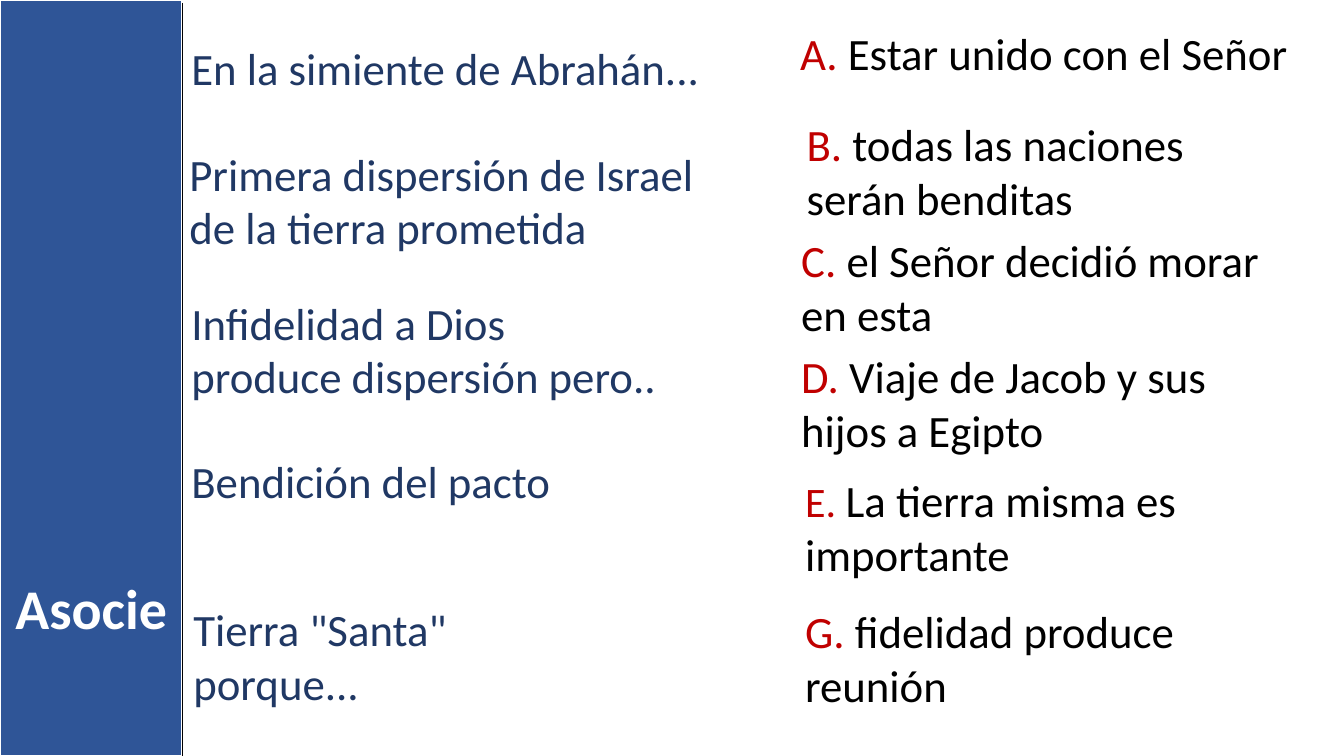
"""Build a Spanish matching exercise slide with prompts on the left and lettered answers on the right."""
from dataclasses import dataclass

from lxml.etree import SubElement
from pptx import Presentation
from pptx.dml.color import RGBColor
from pptx.enum.shapes import MSO_CONNECTOR, MSO_SHAPE
from pptx.enum.text import MSO_AUTO_SIZE, PP_ALIGN
from pptx.oxml.ns import qn
from pptx.util import Pt


@dataclass(frozen=True)
class Theme:
    font: str = "Calibri"
    band: RGBColor = RGBColor(0x2F, 0x55, 0x97)
    prompt: RGBColor = RGBColor(0x20, 0x38, 0x64)
    letter: RGBColor = RGBColor(0xC0, 0x00, 0x00)
    black: RGBColor = RGBColor(0x00, 0x00, 0x00)
    white: RGBColor = RGBColor(0xFF, 0xFF, 0xFF)
    title_size: int = 40
    body_size: int = 32
    small_letter_size: int = 30


theme = Theme()
slide_width, slide_height = 960, 540
band_width = 130.3

presentation = Presentation()
presentation.slide_width = Pt(slide_width)
presentation.slide_height = Pt(slide_height)
slide = presentation.slides.add_slide(presentation.slide_layouts[6])


def add_text(left, top, width, height, text, size, color):
    """Add a wrapping text box and return its paragraph."""
    box = slide.shapes.add_textbox(Pt(left), Pt(top), Pt(width), Pt(height))
    box.text_frame.word_wrap = True
    box.text_frame.auto_size = MSO_AUTO_SIZE.SHAPE_TO_FIT_TEXT
    paragraph = box.text_frame.paragraphs[0]
    paragraph.font.name = theme.font
    paragraph.font.size = Pt(size)
    paragraph.font.color.rgb = color
    paragraph.add_run().text = text
    return paragraph


band = slide.shapes.add_shape(MSO_SHAPE.RECTANGLE, 0, 0, Pt(band_width), Pt(slide_height))
band.shadow.inherit = False
band.fill.solid()
band.fill.fore_color.rgb = theme.band
band.line.color.rgb = theme.white
band.line.width = Pt(1.5)

one_line, two_lines = 46, 85

prompts = [
    (129.6, 25.2, 384, one_line, "En la simiente de Abrahán..."),
    (128.2, 101, 384.5, two_lines, "Primera dispersión de Israel de la tierra prometida"),
    (129.6, 207.4, 352, two_lines, "Infidelidad a Dios produce dispersión pero.."),
    (129.6, 320.4, 331, one_line, "Bendición del pacto"),
    (131, 426.4, 317, two_lines, "Tierra \"Santa\" porque..."),
]
for left, top, width, height, text in prompts:
    add_text(left, top, width, height, text, theme.body_size, theme.prompt)

answers = [
    ("A. ", 564.5, 15.1, 371.5, one_line, "Estar unido con el Señor"),
    ("B. ", 569, 80, 362, two_lines, "todas las naciones serán benditas"),
    ("C. ", 565.2, 162.9, 361.5, two_lines, "el Señor decidió morar en esta"),
    ("D. ", 565.2, 245.7, 365.5, two_lines, "Viaje de Jacob y sus hijos a Egipto"),
    ("E. ", 568, 334.3, 340, two_lines, "La tierra misma es importante"),
    ("G. ", 568, 427.8, 356.5, two_lines, "fidelidad produce reunión"),
]
for letter, left, top, width, height, text in answers:
    paragraph = add_text(left, top, width, height, letter, theme.body_size, theme.letter)
    if letter == "E. ":
        paragraph.runs[0].font.size = Pt(theme.small_letter_size)
    answer = paragraph.add_run()
    answer.text = text
    answer.font.color.rgb = theme.black

title = add_text(0, 406, band_width, 55.7, "Asocie", theme.title_size, theme.white)
title.alignment = PP_ALIGN.CENTER
title.font.bold = True

edge = slide.shapes.add_connector(
    MSO_CONNECTOR.STRAIGHT, Pt(band_width), Pt(2), Pt(band_width), Pt(slide_height))
edge.line.color.rgb = theme.black
edge.line.width = Pt(1)
SubElement(edge.element.spPr, qn("a:effectLst"))

presentation.save("out.pptx")
